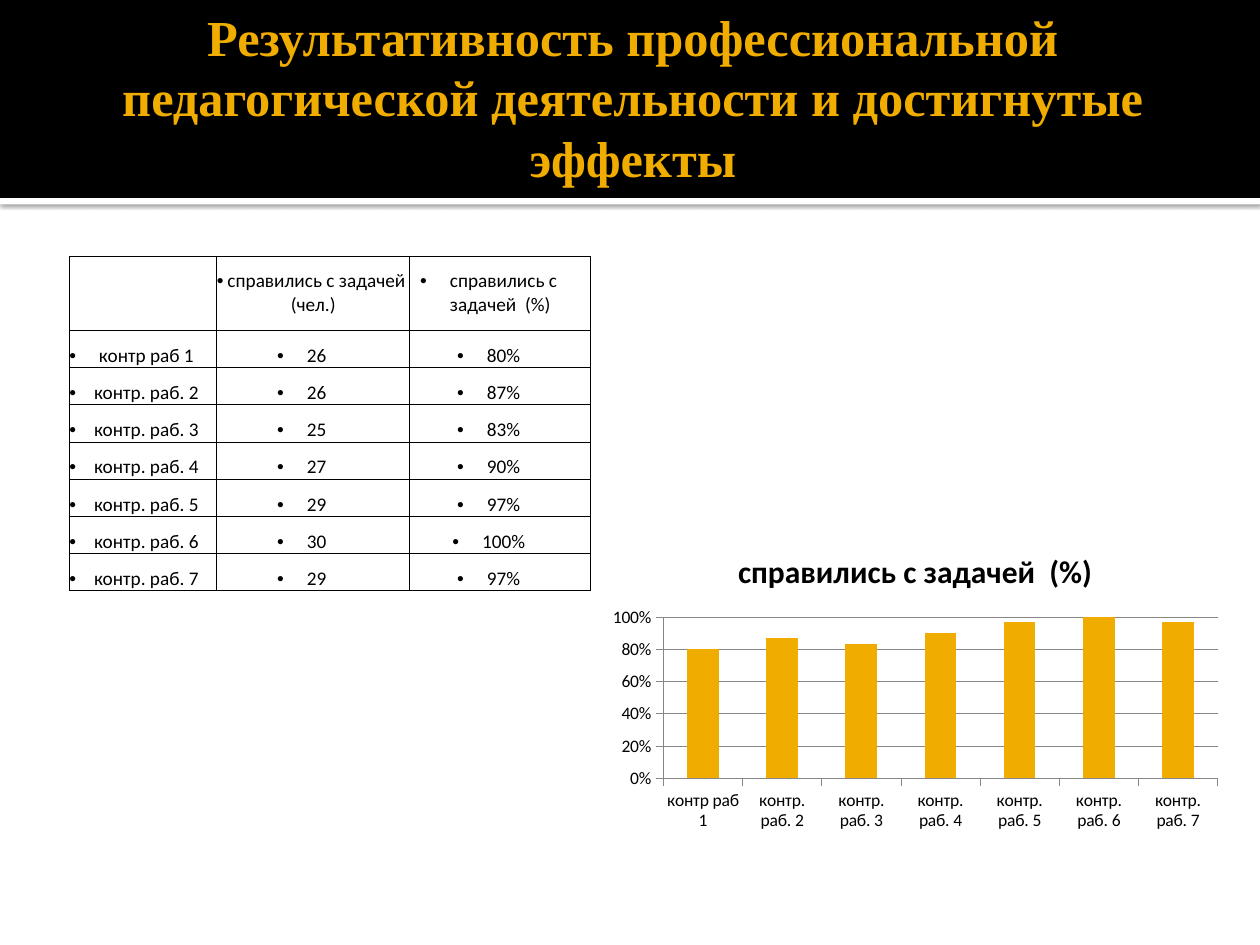
import pptx
import pptx.chart.data
import pptx.dml.color
import pptx.enum.chart
import pptx.enum.shapes
import pptx.enum.text
import pptx.oxml
import pptx.oxml.ns
import pptx.util

Cm = pptx.util.Cm
Pt = pptx.util.Pt
Anchor = pptx.enum.text.MSO_ANCHOR
NAMESPACE = pptx.oxml.ns.nsdecls("a")


def colour(code):
    return pptx.dml.color.RGBColor.from_string(code)


def add_xml(parent, text):
    parent.append(pptx.oxml.parse_xml(text))


class SlideBuilder:
    ACCENT, BLACK, WHITE, GREY = "F0AD00", "000000", "FFFFFF", "868686"
    BODY_FONT, TITLE_FONT = "Calibri", "Times New Roman"

    def __init__(self, page):
        self.page = page

    def style(self, font, name, size, code, bold=False):
        font.name, font.size, font.bold = name, Pt(size), bold
        font.color.rgb = colour(code)

    def band(self, top, height, code):
        shape = self.page.shapes.add_shape(
            pptx.enum.shapes.MSO_SHAPE.RECTANGLE, 0, Cm(top), Cm(25.4), Cm(height))
        shape.fill.solid()
        shape.fill.fore_color.rgb = colour(code)
        shape.line.fill.background()
        shape.shadow.inherit = False
        return shape

    def cast_shadow(self, shape):
        effects = shape.element.spPr.find(pptx.oxml.ns.qn("a:effectLst"))
        add_xml(effects, f'<a:outerShdw {NAMESPACE} blurRad="{Pt(2.5)}" dist="{Pt(0.8)}" '
                f'dir="5400000" rotWithShape="0"><a:srgbClr val="{self.BLACK}">'
                '<a:alpha val="60000"/></a:srgbClr></a:outerShdw>')

    def title(self, text, left, top, width, height):
        box = self.page.shapes.add_textbox(Cm(left), Cm(top), Cm(width), Cm(height))
        frame = box.text_frame
        frame.word_wrap = True
        frame.vertical_anchor = Anchor.MIDDLE
        frame.margin_left = Cm(0.25)
        frame.margin_right = frame.margin_top = frame.margin_bottom = Cm(0.13)
        para = frame.paragraphs[0]
        para.alignment = pptx.enum.text.PP_ALIGN.CENTER
        span = para.add_run()
        span.text = text
        self.style(span.font, self.TITLE_FONT, 28.8, self.ACCENT, bold=True)

    def cell(self, cell, text, anchor):
        cell.margin_left = cell.margin_right = cell.margin_top = cell.margin_bottom = 0
        cell.vertical_anchor = anchor
        for side in ("lnL", "lnR", "lnT", "lnB"):
            add_xml(cell._tc.get_or_add_tcPr(),
                    f'<a:{side} {NAMESPACE} w="{Pt(0.5)}"><a:solidFill>'
                    f'<a:srgbClr val="{self.BLACK}"/></a:solidFill></a:{side}>')
        cell.fill.background()
        para = cell.text_frame.paragraphs[0]
        para.alignment = pptx.enum.text.PP_ALIGN.CENTER
        if not text:
            return
        properties = para._p.get_or_add_pPr()
        properties.set("marL", "0")
        properties.set("indent", str(-Cm(0.6)))
        add_xml(properties, f'<a:buFont {NAMESPACE} typeface="Arial"/>')
        add_xml(properties, f'<a:buChar {NAMESPACE} char="•"/>')
        span = para.add_run()
        span.text = text
        self.style(span.font, self.BODY_FONT, 11, self.BLACK)

    def table(self, rows, left, top, widths, heights):
        table = self.page.shapes.add_table(
            len(rows), len(widths), Cm(left), Cm(top),
            Cm(sum(widths)), Cm(sum(heights))).table
        table.first_row = table.horz_banding = False
        for column, width in zip(table.columns, widths):
            column.width = Cm(width)
        for number, (row, height) in enumerate(zip(rows, heights)):
            table.rows[number].height = Cm(height)
            anchor = Anchor.BOTTOM if number else Anchor.MIDDLE
            for position, text in enumerate(row):
                self.cell(table.cell(number, position), text, anchor)

    def column_chart(self, name, categories, values, left, top, width, height):
        data = pptx.chart.data.CategoryChartData(number_format="0%")
        data.categories = categories
        data.add_series(name, values)
        chart = self.page.shapes.add_chart(
            pptx.enum.chart.XL_CHART_TYPE.COLUMN_CLUSTERED,
            Cm(left), Cm(top), Cm(width), Cm(height), data).chart
        self.style(chart.font, self.BODY_FONT, 10, self.BLACK)
        chart.has_legend = False
        chart.has_title = True
        span = chart.chart_title.text_frame.paragraphs[0].add_run()
        span.text = name
        self.style(span.font, self.BODY_FONT, 18, self.BLACK, bold=True)
        chart.chart_title.include_in_layout = False

        plot = chart.plots[0]
        plot.gap_width = 150
        plot.vary_by_categories = False
        fill = plot.series[0].format.fill
        fill.solid()
        fill.fore_color.rgb = colour(self.ACCENT)

        scale = chart.value_axis
        scale.minimum_scale, scale.maximum_scale, scale.major_unit = 0, 1, 0.2
        scale.has_major_gridlines = True
        scale.tick_labels.number_format = "0%"
        scale.tick_labels.number_format_is_linked = False
        for axis in (chart.category_axis, scale):
            axis.major_tick_mark = pptx.enum.chart.XL_TICK_MARK.OUTSIDE
        for part in (chart.category_axis, scale, scale.major_gridlines):
            part.format.line.color.rgb = colour(self.GREY)
            part.format.line.width = Pt(0.5)


def main():
    deck = pptx.Presentation()
    deck.slide_width, deck.slide_height = Cm(25.4), Cm(19.05)
    builder = SlideBuilder(deck.slides.add_slide(deck.slide_layouts[6]))

    # Header
    builder.cast_shadow(builder.band(3.99, 0.13, builder.WHITE))
    builder.band(0, 3.99, builder.BLACK)
    builder.title("Результативность профессиональной педагогической деятельности "
                  "и достигнутые эффекты", 1.27, 0, 22.86, 3.89)

    # Test results
    tests = ["контр раб 1"] + [f"контр. раб. {number}" for number in range(2, 8)]
    pupils = [26, 26, 25, 27, 29, 30, 29]
    shares = [0.8, 0.87, 0.83, 0.9, 0.97, 1, 0.97]
    share_name = "справились с задачей  (%)"

    # Chart
    builder.column_chart(share_name, tests, shares, 12.1, 10.71, 12.7, 6.15)

    # Table
    rows = [("", "справились с задачей (чел.)", share_name)]
    rows += [(test, str(count), f"{share:.0%}")
             for test, count, share in zip(tests, pupils, shares)]
    builder.table(rows, 1.4, 5.16, [2.97, 3.89, 3.65], [1.5] + [0.75] * len(tests))

    deck.save("out.pptx")


if __name__ == "__main__":
    main()
